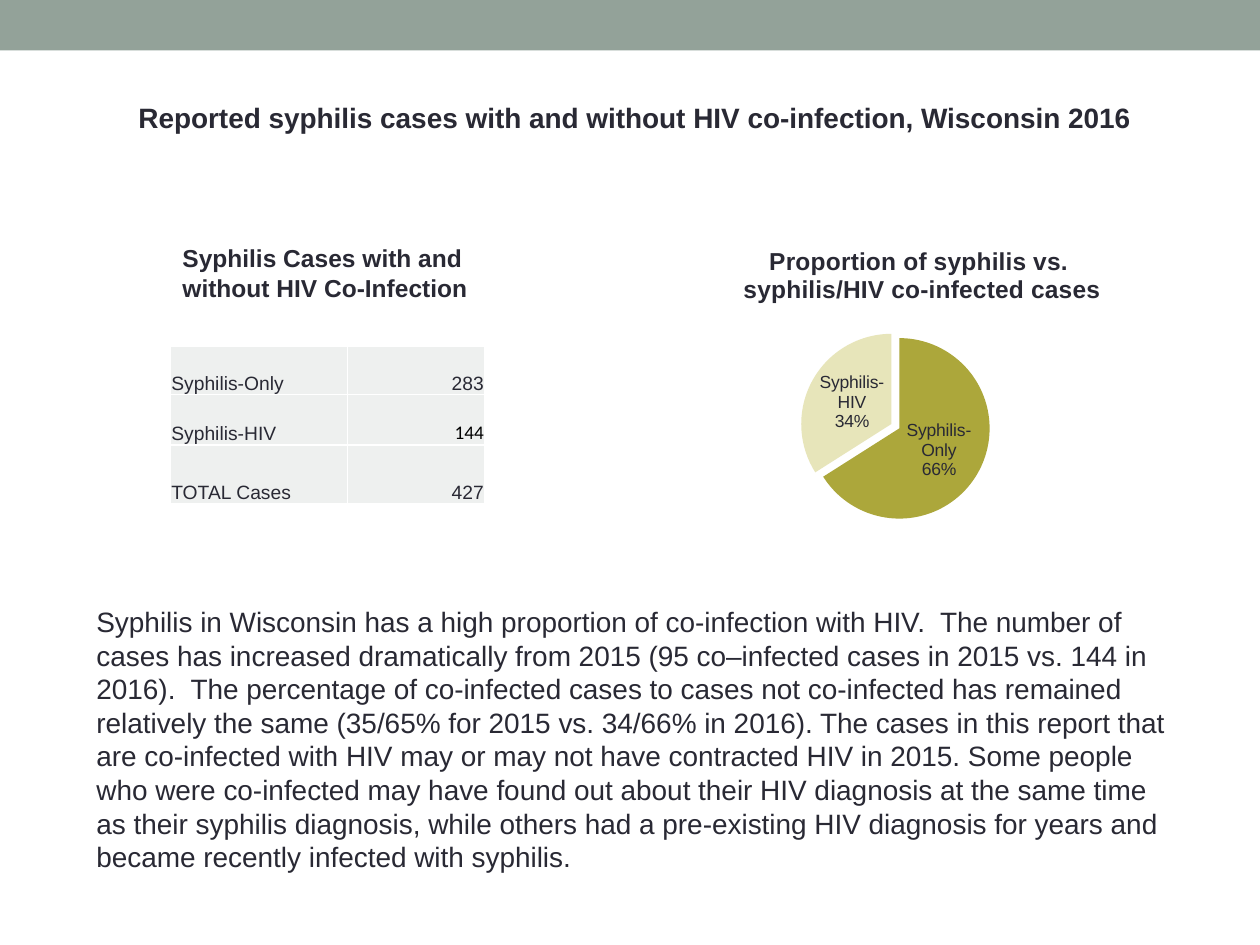
from lxml.etree import SubElement
from pptx import Presentation
from pptx.chart.data import CategoryChartData
from pptx.dml.color import RGBColor
from pptx.enum.chart import XL_CHART_TYPE, XL_LABEL_POSITION
from pptx.enum.shapes import MSO_SHAPE
from pptx.enum.text import MSO_ANCHOR, PP_ALIGN
from pptx.oxml import parse_xml
from pptx.oxml.ns import nsdecls, qn
from pptx.util import Pt

HUES = {"bar": "93A299", "text": "292934", "cell": "EEF0EF", "edge": "FFFFFF",
        "black": "000000", "only": "ACA73B", "both": "E7E5BA"}
CASES = [("Syphilis-Only", "283"), ("Syphilis-HIV", "144"), ("TOTAL Cases", "427")]
BODY = (
    "Syphilis in Wisconsin has a high proportion of co-infection with HIV.  The number of "
    "cases has increased dramatically from 2015 (95 co–infected cases in 2015 vs. 144 in "
    "2016).  The percentage of co-infected cases to cases not co-infected has remained "
    "relatively the same (35/65% for 2015 vs. 34/66% in 2016). The cases in this report that "
    "are co-infected with HIV may or may not have contracted HIV in 2015. Some people "
    "who were co-infected may have found out about their HIV diagnosis at the same time "
    "as their syphilis diagnosis, while others had a pre-existing HIV diagnosis for years and "
    "became recently infected with syphilis."
)


def color(name):
    """Return the named colour."""
    return RGBColor.from_string(HUES[name])


def paint(fill, name):
    """Make a fill solid in the named colour."""
    fill.solid()
    fill.fore_color.rgb = color(name)


def style(font, size, bold=False, hue="text", face="Arial"):
    """Set face, size, weight and colour of a font."""
    font.name, font.size, font.bold = face, Pt(size), bold
    font.color.rgb = color(hue)


def style_all(frame, size, bold=False, hue="text", face="Arial"):
    """Style every run of a text frame."""
    for par in frame.paragraphs:
        for run in par.runs:
            style(run.font, size, bold, hue, face)


def add_bar(slide):
    """Draw the band across the top."""
    bar = slide.shapes.add_shape(MSO_SHAPE.RECTANGLE, 0, 0, Pt(720), Pt(28.8))
    bar.shadow.inherit = False
    paint(bar.fill, "bar")
    bar.line.fill.background()


def add_text(slide, box, text, size, bold=False):
    """Add a wrapped text box."""
    frame = slide.shapes.add_textbox(*map(Pt, box)).text_frame
    frame.word_wrap = True
    frame.text = text
    style_all(frame, size, bold)


def add_edges(cell):
    """Give a cell thin borders on all four sides."""
    props = cell._tc.get_or_add_tcPr()
    for spot, side in enumerate(("lnL", "lnR", "lnT", "lnB")):
        props.insert(spot, parse_xml(
            f'<a:{side} {nsdecls("a")} w="12700"><a:solidFill>'
            f'<a:srgbClr val="{HUES["edge"]}"/></a:solidFill></a:{side}>'))


def fill_cell(cell, text, align, hue, face):
    """Write and format one table cell."""
    cell.text = text
    cell.text_frame.paragraphs[0].alignment = align
    style_all(cell.text_frame, 11, False, hue, face)
    cell.vertical_anchor = MSO_ANCHOR.BOTTOM
    cell.margin_left = cell.margin_right = cell.margin_top = Pt(0.7)
    cell.margin_bottom = 0
    paint(cell.fill, "cell")
    add_edges(cell)


def add_cases(slide):
    """Add the table of case counts."""
    table = slide.shapes.add_table(3, 2, Pt(97.2), Pt(198), Pt(180), Pt(90)).table
    table.first_row = table.horz_banding = False
    for col, width in zip(table.columns, (101.5, 78.5)):
        col.width = Pt(width)
    for row, high, texts in zip(table.rows, (27.4, 28.8, 33.8), CASES):
        row.height = Pt(high)
        look = ("black", "Calibri") if texts[1] == "144" else ("text", "Arial")
        fill_cell(row.cells[0], texts[0], PP_ALIGN.LEFT, "text", "Arial")
        fill_cell(row.cells[1], texts[1], PP_ALIGN.RIGHT, *look)


def place(node, **spots):
    """Fix a chart part at fractions of the chart area."""
    old = node.find(qn("c:layout"))
    if old is not None:
        node.remove(old)
    layout = parse_xml(f'<c:layout {nsdecls("c")}><c:manualLayout/></c:layout>')
    if "w" in spots:
        SubElement(layout[0], qn("c:layoutTarget")).set("val", "inner")
    for axis in "xy":
        SubElement(layout[0], qn(f"c:{axis}Mode")).set("val", "edge")
    for key, part in spots.items():
        SubElement(layout[0], qn(f"c:{key}")).set("val", str(part))
    text = node.find(qn("c:tx"))
    node.insert(0 if text is None else 1, layout)


def add_pie(slide):
    """Add the pie of case shares."""
    data = CategoryChartData()
    data.categories = ["Syphilis Only", "Syphilis-HIV"]
    data.add_series("Series 1", (66, 34))
    box = map(Pt, (372.2, 113, 273.6, 212.4))
    chart = slide.shapes.add_chart(XL_CHART_TYPE.PIE, *box, data).chart
    style(chart.font, 10)
    chart.has_legend = False
    title = chart.chart_title
    title.text_frame.text = "Proportion of syphilis vs.\n syphilis/HIV co-infected cases"
    style_all(title.text_frame, 14, True)
    place(title._element, x=0.17, y=0.12)
    place(chart._chartSpace.chart.plotArea, x=0.31, y=0.36, w=0.4, h=0.51)

    plot = chart.plots[0]
    plot.vary_by_categories = True
    plot.has_data_labels = True
    labels = plot.data_labels
    labels.show_percentage = labels.show_category_name = True
    labels.show_value = False
    pie = plot.series[0]
    slices = (("only", "Syphilis- Only\n66%"), ("both", "Syphilis-HIV\n34%"))
    for spot, (hue, text) in enumerate(slices):
        point = pie.points[spot]
        paint(point.format.fill, hue)
        label = point.data_label
        label.text_frame.text = text
        style_all(label.text_frame, 10)
        label.position = XL_LABEL_POSITION.CENTER
    burst = parse_xml(f'<c:explosion {nsdecls("c")} val="5"/>')
    pie._element.find(qn("c:dPt")).addprevious(burst)


def main():
    """Build the slide and save it."""
    deck = Presentation()
    deck.slide_width, deck.slide_height = Pt(720), Pt(540)
    slide = deck.slides.add_slide(deck.slide_layouts[6])
    add_bar(slide)
    add_cases(slide)
    add_pie(slide)
    add_text(slide, (97.2, 135.4, 210, 41),
             "Syphilis Cases with and without HIV Co-Infection", 14, True)
    add_text(slide, (48, 342, 630, 162.7), BODY, 16)
    add_text(slide, (72, 54, 588, 26.6),
             "Reported syphilis cases with and without HIV co-infection, Wisconsin 2016", 16, True)
    deck.save("out.pptx")


if __name__ == "__main__":
    main()
